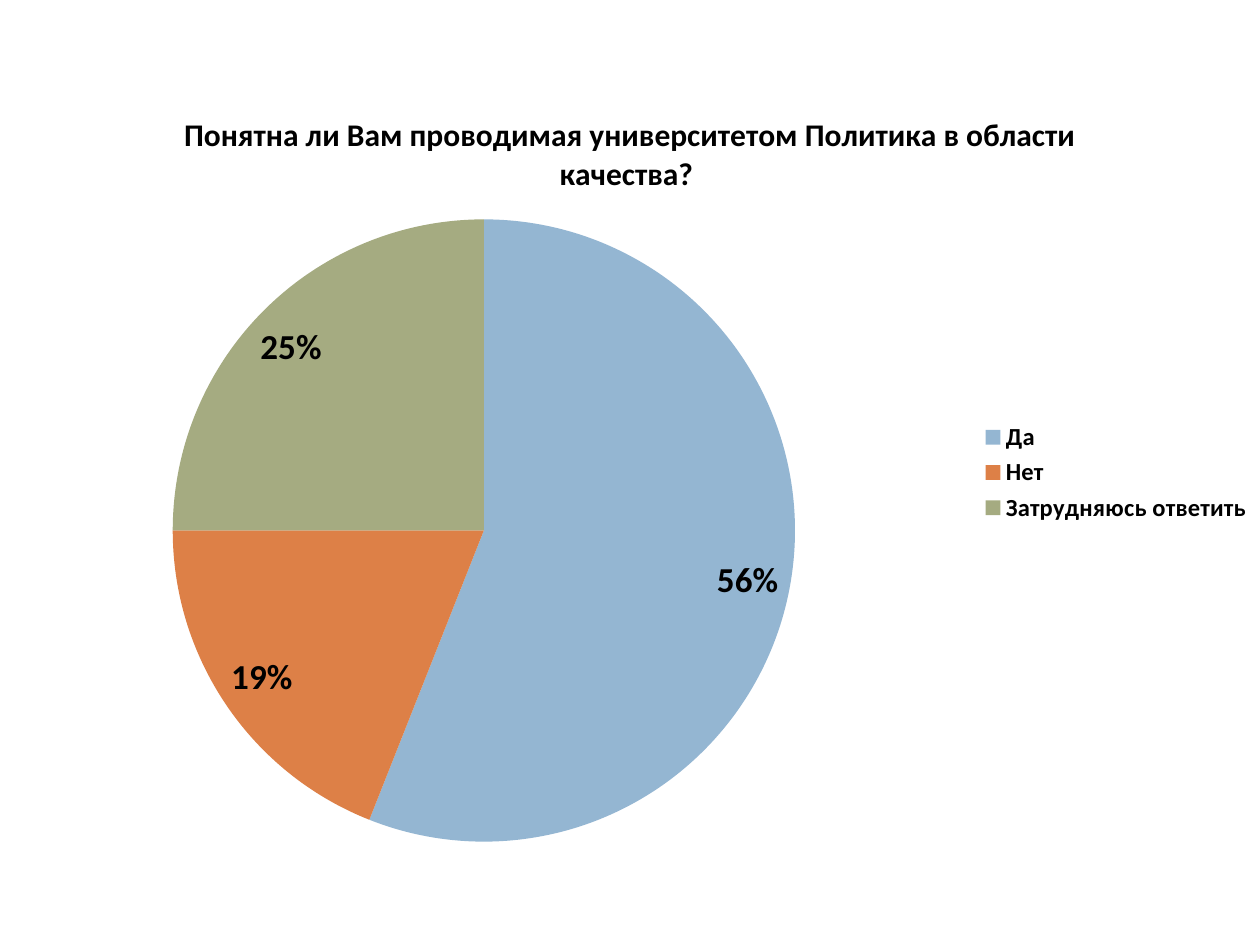
from dataclasses import dataclass

import pptx
import pptx.chart.data
import pptx.dml.color
import pptx.enum.chart
import pptx.oxml
import pptx.oxml.ns
import pptx.util


@dataclass(frozen=True)
class Theme:
    font: str = "Calibri"
    text: str = "000000"
    base_size: int = 10
    title_size: int = 18
    legend_size: int = 14
    label_size: int = 20


@dataclass(frozen=True)
class Answer:
    name: str
    share: float
    color: str


@dataclass(frozen=True)
class Area:
    """Left, top, width and height as shares of the enclosing frame."""
    x: float
    y: float
    w: float
    h: float


THEME = Theme()
QUESTION = "Понятна ли Вам проводимая университетом Политика в области качества? "
ANSWERS = [
    Answer("Да", 0.56, "94B6D2"),
    Answer("Нет", 0.19, "DD8047"),
    Answer("Затрудняюсь ответить", 0.25, "A5AB81"),
]
CHART_AREA = Area(-0.004, 0.09, 1.008, 0.82)
PIE_AREA = Area(0.14, 0.17, 0.49, 0.81)


def rgb(color: str) -> pptx.dml.color.RGBColor:
    return pptx.dml.color.RGBColor.from_string(color)


def style_font(font, size: int, bold: bool = False) -> None:
    font.name = THEME.font
    font.size = pptx.util.Pt(size)
    font.bold = bold
    font.color.rgb = rgb(THEME.text)


def place_plot(chart, area: Area) -> None:
    """Fix the inner plot area inside the chart."""
    plot_area = chart.plots[0]._element.getparent()
    for automatic in plot_area.findall(pptx.oxml.ns.qn("c:layout")):
        plot_area.remove(automatic)
    lengths = "".join(f'<c:{key} val="{getattr(area, key)}"/>' for key in "xywh")
    plot_area.insert(0, pptx.oxml.parse_xml(
        f'<c:layout {pptx.oxml.ns.nsdecls("c")}><c:manualLayout>'
        '<c:layoutTarget val="inner"/><c:xMode val="edge"/><c:yMode val="edge"/>'
        f"{lengths}</c:manualLayout></c:layout>"))


def add_answer_pie(slide, answers: list[Answer], frame: tuple[int, int]) -> None:
    width, height = frame
    shares = pptx.chart.data.CategoryChartData(number_format="0%")
    shares.categories = [answer.name for answer in answers]
    shares.add_series("Series 1", [answer.share for answer in answers])
    chart = slide.shapes.add_chart(
        pptx.enum.chart.XL_CHART_TYPE.PIE,
        int(CHART_AREA.x * width), int(CHART_AREA.y * height),
        int(CHART_AREA.w * width), int(CHART_AREA.h * height), shares).chart
    style_font(chart.font, THEME.base_size)

    # Question as the chart title
    chart.has_title = True
    question = chart.chart_title.text_frame
    question.text = QUESTION
    style_font(question.paragraphs[0].runs[0].font, THEME.title_size, bold=True)
    chart.chart_title.include_in_layout = False

    # Legend
    chart.has_legend = True
    chart.legend.position = pptx.enum.chart.XL_LEGEND_POSITION.RIGHT
    chart.legend.include_in_layout = False
    style_font(chart.legend.font, THEME.legend_size, bold=True)

    # Slices
    pie = chart.plots[0]
    pie.vary_by_categories = True
    for index, answer in enumerate(answers):
        fill = pie.series[0].points[index].format.fill
        fill.solid()
        fill.fore_color.rgb = rgb(answer.color)

    # Percentages
    labels = pie.series[0].data_labels
    labels.show_value = True
    labels.number_format = "0%"
    labels.number_format_is_linked = False
    labels.position = pptx.enum.chart.XL_LABEL_POSITION.BEST_FIT
    style_font(labels.font, THEME.label_size, bold=True)
    place_plot(chart, PIE_AREA)


def main() -> None:
    deck = pptx.Presentation()
    deck.slide_width = pptx.util.Inches(10)
    deck.slide_height = pptx.util.Inches(7.5)
    slide = deck.slides.add_slide(deck.slide_layouts[6])
    add_answer_pie(slide, ANSWERS, (deck.slide_width, deck.slide_height))
    deck.save("out.pptx")


if __name__ == "__main__":
    main()
